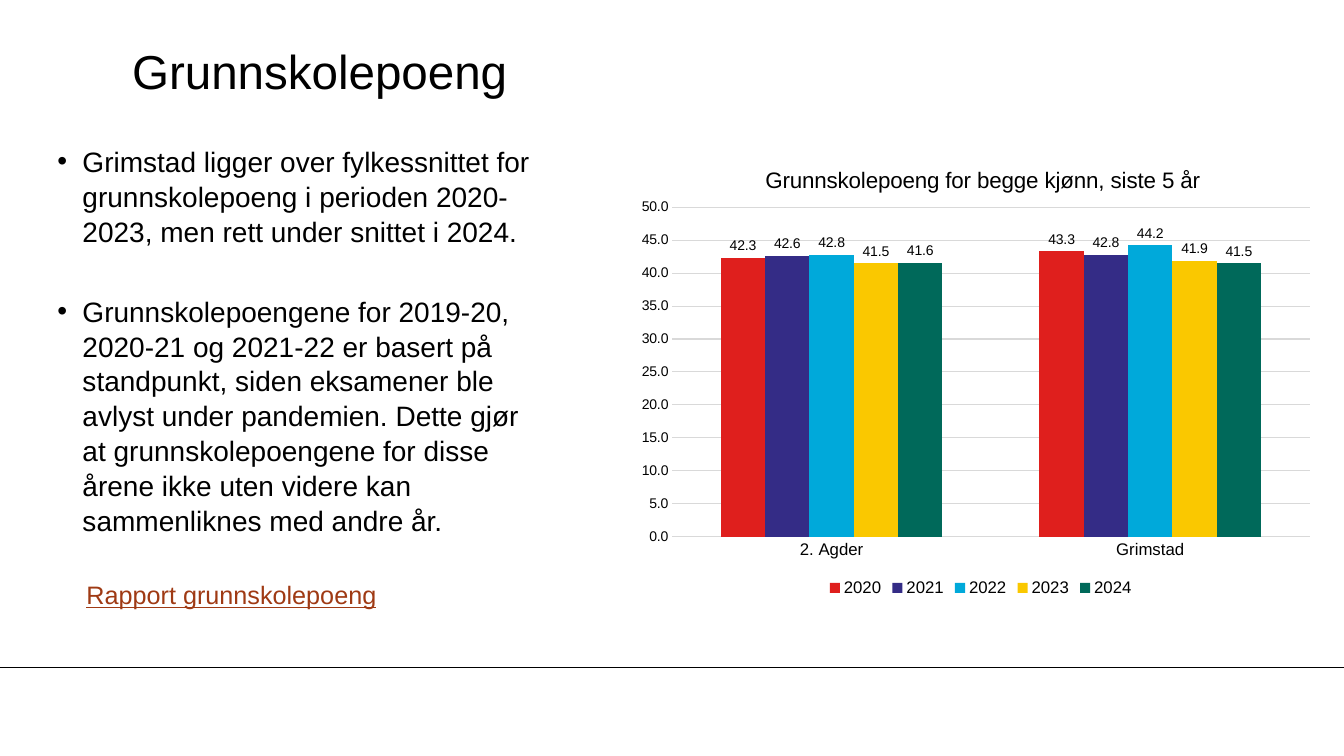
from lxml import etree
from pptx import Presentation
from pptx.chart.data import CategoryChartData
from pptx.dml.color import RGBColor
from pptx.enum.chart import XL_CHART_TYPE as Kind, XL_LABEL_POSITION as Spot
from pptx.enum.chart import XL_LEGEND_POSITION as Side, XL_TICK_MARK as Tick
from pptx.enum.shapes import MSO_CONNECTOR as Link
from pptx.enum.text import MSO_ANCHOR as Anchor
from pptx.oxml import parse_xml
from pptx.oxml.ns import nsdecls, qn
from pptx.util import Cm, Pt

BLACK = RGBColor(0, 0, 0)
GREY = RGBColor(0xD9, 0xD9, 0xD9)
RUST = RGBColor(0x9F, 0x3A, 0x14)
RED = RGBColor(0xDF, 0x1F, 0x1D)
NAVY = RGBColor(0x34, 0x2C, 0x86)
CYAN = RGBColor(0x00, 0xA9, 0xDA)
GOLD = RGBColor(0xFA, 0xC8, 0x00)
GREEN = RGBColor(0x00, 0x69, 0x5A)

WIDE, HIGH = Cm(33.87), Cm(19.05)
TITLE = "Grunnskolepoeng"
POINTS = [
    "Grimstad ligger over fylkessnittet for grunnskolepoeng i perioden "
    "2020-2023, men rett under snittet i 2024.",
    "Grunnskolepoengene for 2019-20, 2020-21 og 2021-22 er basert på "
    "standpunkt, siden eksamener ble avlyst under pandemien. Dette gjør at "
    "grunnskolepoengene for disse årene ikke uten videre kan sammenliknes "
    "med andre år.",
]
REPORT = "Rapport grunnskolepoeng"
HEAD = "Grunnskolepoeng for begge kjønn, siste 5 år"
PLACES = ["2. Agder", "Grimstad"]
YEARS = [
    ("2020", (42.3, 43.3), RED),
    ("2021", (42.6, 42.8), NAVY),
    ("2022", (42.8, 44.2), CYAN),
    ("2023", (41.5, 41.9), GOLD),
    ("2024", (41.6, 41.5), GREEN),
]


def style(font, size, color=BLACK):
    font.name = "Arial"
    font.size = Pt(size)
    font.bold = False
    font.color.rgb = color


def add_text(slide, box, lines, size, color=BLACK, inset=True):
    frame = slide.shapes.add_textbox(*box).text_frame
    frame.word_wrap = True
    if not inset:
        frame.margin_left = frame.margin_right = 0
        frame.margin_top = frame.margin_bottom = 0
    frame.text = "\n".join(lines)
    for para in frame.paragraphs:
        for run in para.runs:
            style(run.font, size, color)
    return frame


def add_title(slide, box):
    frame = add_text(slide, box, [TITLE], 34, inset=False)
    frame.vertical_anchor = Anchor.MIDDLE


def add_points(slide, box):
    frame = add_text(slide, box, POINTS, 20, inset=False)
    for rank, para in enumerate(frame.paragraphs):
        props = para._p.get_or_add_pPr()
        props.set("marL", str(Cm(0.63)))
        props.set("indent", str(-Cm(0.63)))
        etree.SubElement(props, qn("a:buFont")).set("typeface", "Arial")
        etree.SubElement(props, qn("a:buChar")).set("char", "•")
        para.line_spacing = 1.04
        if rank:
            para.space_before = Pt(32)


def add_report(slide, box):
    frame = add_text(slide, box, [REPORT], 18, RUST)
    frame.paragraphs[0].runs[0].font.underline = True


def add_rule(slide, top):
    rule = slide.shapes.add_connector(Link.STRAIGHT, 0, top, WIDE, top)
    rule.line.color.rgb = BLACK
    rule.line.width = Pt(0.75)
    etree.SubElement(rule._element.spPr, qn("a:effectLst"))


def lay_out(node, index, inner=False, **parts):
    for old in node.findall(qn("c:layout")):
        node.remove(old)
    target = '<c:layoutTarget val="inner"/>' if inner else ""
    modes = "".join(f'<c:{key}Mode val="edge"/>' for key in "xy")
    sizes = "".join(f'<c:{key} val="{val}"/>' for key, val in parts.items())
    node.insert(index, parse_xml(
        f'<c:layout {nsdecls("c")}><c:manualLayout>{target}{modes}{sizes}'
        "</c:manualLayout></c:layout>"))


def style_axes(chart):
    cats, vals = chart.category_axis, chart.value_axis
    for axis, size in ((cats, 12), (vals, 10)):
        axis.major_tick_mark = axis.minor_tick_mark = Tick.NONE
        style(axis.tick_labels.font, size)
    vals.minimum_scale, vals.maximum_scale, vals.major_unit = 0, 50, 5
    vals.format.line.fill.background()
    for line in (cats.format.line, vals.major_gridlines.format.line):
        line.color.rgb = GREY
        line.width = Pt(0.75)


def add_graph(slide, box):
    data = CategoryChartData(number_format="0.0")
    data.categories = PLACES
    for year, scores, _ in YEARS:
        data.add_series(year, scores)
    chart = slide.shapes.add_chart(Kind.COLUMN_CLUSTERED, *box, data).chart
    style(chart.font, 10)

    chart.has_title = True
    title = chart.chart_title
    title.text_frame.text = HEAD
    style(title.text_frame.paragraphs[0].runs[0].font, 16)
    title.include_in_layout = False
    lay_out(title._element, 1, x=0.18, y=0.04)

    chart.has_legend = True
    chart.legend.position = Side.BOTTOM
    chart.legend.include_in_layout = False
    style(chart.legend.font, 12)

    plot = chart.plots[0]
    plot.gap_width, plot.overlap = 219, 0
    plot.vary_by_categories = False
    for bars, (_, _, color) in zip(plot.series, YEARS):
        bars.format.fill.solid()
        bars.format.fill.fore_color.rgb = color
        labels = bars.data_labels
        labels.show_value = True
        labels.position = Spot.OUTSIDE_END
        labels.number_format = "0.0"
        labels.number_format_is_linked = False
        style(labels.font, 10)
    style_axes(chart)
    area = chart._chartSpace.chart.plotArea
    lay_out(area, 0, inner=True, x=0.05, y=0.14, w=0.93, h=0.72)


def main():
    deck = Presentation()
    deck.slide_width, deck.slide_height = WIDE, HIGH
    slide = deck.slides.add_slide(deck.slide_layouts[6])
    add_rule(slide, Cm(16.81))
    add_title(slide, (Cm(3.33), Cm(0.81), Cm(28.19), Cm(1.91)))
    add_points(slide, (Cm(1.45), Cm(3.61), Cm(11.99), Cm(10.03)))
    add_report(slide, (Cm(1.93), Cm(14.48), Cm(8.38), Cm(1.02)))
    add_graph(slide, (Cm(16.08), Cm(3.61), Cm(17.27), Cm(11.53)))
    deck.save("out.pptx")


if __name__ == "__main__":
    main()
